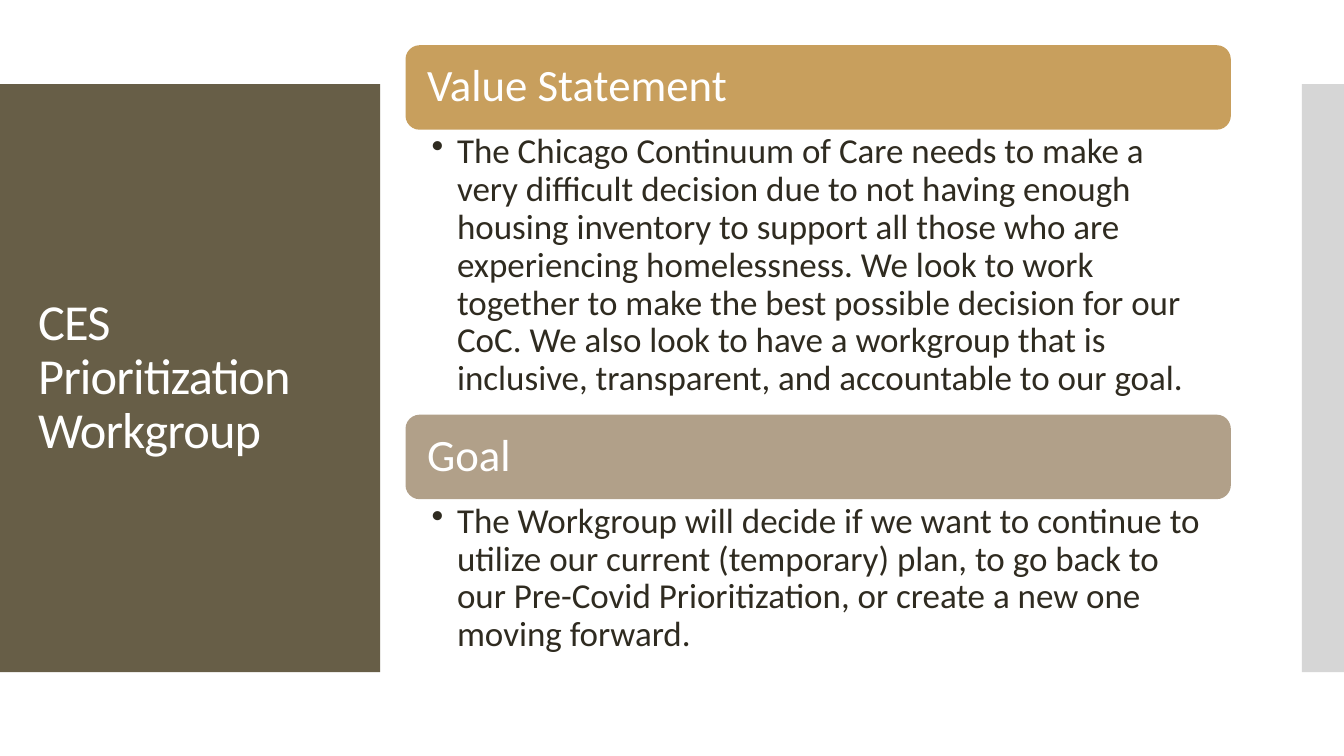
from dataclasses import dataclass

from lxml.etree import SubElement
from pptx import Presentation
from pptx.dml.color import RGBColor
from pptx.enum.shapes import MSO_SHAPE
from pptx.enum.text import MSO_ANCHOR, PP_ALIGN
from pptx.oxml.ns import qn
from pptx.shapes.autoshape import Shape
from pptx.slide import Slide
from pptx.text.text import _Paragraph as Paragraph
from pptx.util import Cm, Pt

WHITE = RGBColor(0xFF, 0xFF, 0xFF)
INK = RGBColor(0x2F, 0x2B, 0x20)
OLIVE = RGBColor(0x67, 0x5E, 0x47)
LIGHT_GRAY = RGBColor(0xD6, 0xD6, 0xD6)
GOLD = RGBColor(0xC8, 0x9F, 0x5D)
TAUPE = RGBColor(0xB1, 0xA0, 0x89)

FONT_NAME = "Calibri"
SLIDE_WIDTH, SLIDE_HEIGHT = 33.87, 19.05
PANEL_TOP, PANEL_HEIGHT = 2.12, 14.82
TITLE_WIDTH, EDGE_WIDTH = 9.58, 1.06
SECTION_LEFT, SECTION_WIDTH = 10.22, 20.8
HEADER_HEIGHT = 2.13


@dataclass(frozen=True)
class Section:
    heading: str
    body: str
    top: float
    body_height: float
    color: RGBColor


SECTIONS = [
    Section(
        "Value Statement",
        "The Chicago Continuum of Care needs to make a very difficult decision due to "
        "not having enough housing inventory to support all those who are experiencing "
        "homelessness. We look to work together to make the best possible decision for "
        "our CoC. We also look to have a workgroup that is inclusive, transparent, and "
        "accountable to our goal.",
        1.14, 7.18, GOLD,
    ),
    Section(
        "Goal",
        "The Workgroup will decide if we want to continue to utilize our current "
        "(temporary) plan, to go back to our Pre-Covid Prioritization, or create a new "
        "one moving forward.",
        10.45, 4.14, TAUPE,
    ),
]


def add_block(slide: Slide, kind: MSO_SHAPE, left: float, top: float,
              width: float, height: float, color: RGBColor) -> Shape:
    shape = slide.shapes.add_shape(kind, Cm(left), Cm(top), Cm(width), Cm(height))
    shape.shadow.inherit = False
    shape.fill.solid()
    shape.fill.fore_color.rgb = color
    shape.line.fill.background()
    return shape


def write_text(shape: Shape, text: str, size: float, color: RGBColor, anchor: MSO_ANCHOR,
               left: float, right: float, vertical: float, bullet: bool = False) -> Paragraph:
    frame = shape.text_frame
    frame.word_wrap = True
    frame.vertical_anchor = anchor
    frame.margin_left, frame.margin_right = Cm(left), Cm(right)
    frame.margin_top = frame.margin_bottom = Cm(vertical)
    paragraph = frame.paragraphs[0]
    paragraph.text = text
    paragraph.alignment = PP_ALIGN.LEFT
    paragraph.line_spacing = 0.9
    if bullet:
        properties = paragraph._p.get_or_add_pPr()
        properties.set("marL", str(Cm(0.64)))
        properties.set("indent", str(Cm(-0.64)))
        SubElement(properties, qn("a:buChar")).set("char", "•")
    paragraph.font.name = FONT_NAME
    paragraph.font.size = Pt(size)
    paragraph.font.color.rgb = color
    return paragraph


def add_title_panel(slide: Slide, title: str) -> None:
    panel = add_block(slide, MSO_SHAPE.RECTANGLE, 0, PANEL_TOP, TITLE_WIDTH, PANEL_HEIGHT, OLIVE)
    paragraph = write_text(panel, title, 36, WHITE, MSO_ANCHOR.MIDDLE, 0.96, 0.94, 0.13)
    paragraph.runs[0]._r.get_or_add_rPr().set("spc", "-60")


def add_section(slide: Slide, section: Section) -> None:
    header = add_block(slide, MSO_SHAPE.ROUNDED_RECTANGLE, SECTION_LEFT, section.top,
                       SECTION_WIDTH, HEADER_HEIGHT, section.color)
    write_text(header, section.heading, 32, WHITE, MSO_ANCHOR.MIDDLE, 0.44, 0.44, 0.33)
    body = slide.shapes.add_textbox(Cm(SECTION_LEFT), Cm(section.top + HEADER_HEIGHT),
                                    Cm(SECTION_WIDTH), Cm(section.body_height))
    write_text(body, section.body, 25, INK, MSO_ANCHOR.TOP, 0.66, 0.64, 0.1, bullet=True)


def main() -> None:
    presentation = Presentation()
    presentation.slide_width = Cm(SLIDE_WIDTH)
    presentation.slide_height = Cm(SLIDE_HEIGHT)
    slide = presentation.slides.add_slide(presentation.slide_layouts[6])
    add_block(slide, MSO_SHAPE.RECTANGLE, SLIDE_WIDTH - EDGE_WIDTH, PANEL_TOP,
              EDGE_WIDTH, PANEL_HEIGHT, LIGHT_GRAY)
    add_title_panel(slide, "CES Prioritization Workgroup")
    for section in SECTIONS:
        add_section(slide, section)
    presentation.save("out.pptx")


if __name__ == "__main__":
    main()
